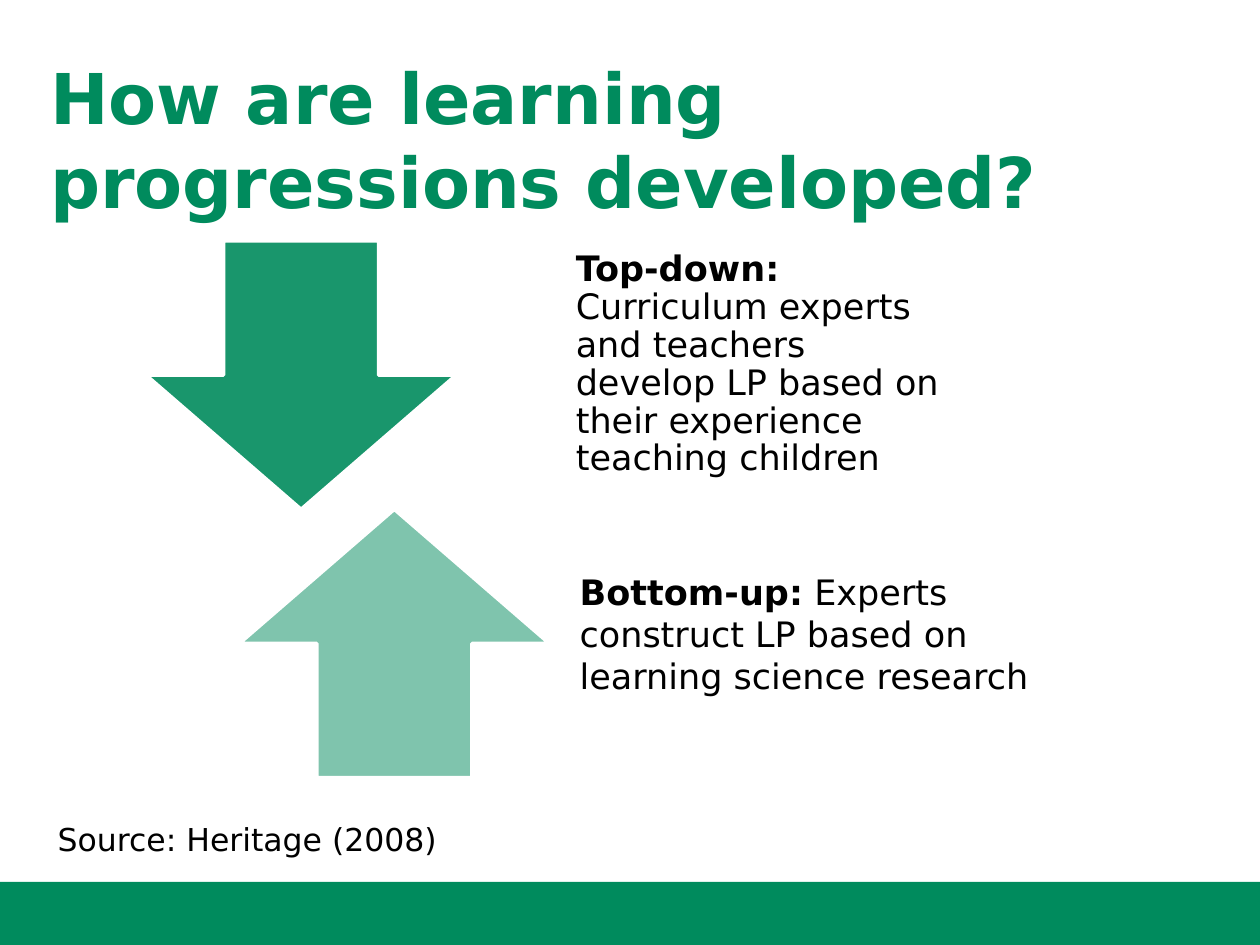
from lxml.etree import SubElement
from pptx import Presentation
from pptx.dml.color import RGBColor
from pptx.enum.shapes import MSO_SHAPE
from pptx.enum.text import MSO_ANCHOR
from pptx.oxml.ns import qn
from pptx.util import Inches, Pt

THEME = {
    "font": "DejaVu Sans",
    "green": RGBColor(0x00, 0x8B, 0x5D),
    "black": RGBColor(0, 0, 0),
    "white": RGBColor(0xFF, 0xFF, 0xFF),
    "title": Pt(40),
    "body": Pt(20),
    "source": Pt(18),
}

deck = Presentation()
deck.slide_width, deck.slide_height = Inches(10), Inches(7.5)
slide = deck.slides.add_slide(deck.slide_layouts[6])


def area(left, top, width, height):
    """Turn percentages of the slide's width and height into lengths."""
    across, down = deck.slide_width / 100, deck.slide_height / 100
    return [round(share) for share in
            (left * across, top * down, width * across, height * down)]


def add_text(place, runs, size, color, insets, anchor=MSO_ANCHOR.TOP):
    """Add one paragraph of (wording, bold) runs; insets are in inches."""
    frame = slide.shapes.add_textbox(*area(*place)).text_frame
    frame.word_wrap = True
    frame.vertical_anchor = anchor
    for side, inset in zip(("left", "top", "right", "bottom"), insets):
        setattr(frame, f"margin_{side}", Inches(inset))
    paragraph = frame.paragraphs[0]
    for wording, bold in runs:
        run = paragraph.add_run()
        run.text = wording
        look = {"name": THEME["font"], "size": THEME[size], "bold": bold}
        for attribute, value in look.items():
            setattr(run.font, attribute, value)
        run.font.color.rgb = THEME[color]
    return paragraph


footer = slide.shapes.add_shape(MSO_SHAPE.RECTANGLE, *area(0, 93.33, 100, 6.67))
footer.shadow.inherit = False
footer.fill.solid()
footer.fill.fore_color.rgb = THEME["green"]
footer.line.fill.background()

add_text((4, 5.73, 93, 13.07), [("How are learning progressions developed?", True)],
         "title", "green", (0, 0, 0.1, 0.05))
add_text((3.6, 86.13, 89.3, 5.33), [("Source: Heritage (2008)", False)],
         "source", "black", (0.1, 0.05, 0.1, 0.05))

# Each approach: arrow, opacity, arrow left, text left, text width, line spacing, wording
approaches = [
    (MSO_SHAPE.DOWN_ARROW, 90, 11.6, 44.1, 32.9, 0.9, "Top-down:",
     " Curriculum experts and teachers develop LP based on their experience teaching children"),
    (MSO_SHAPE.UP_ARROW, 50, 19, 44.4, 41.8, 1.0, "Bottom-up:",
     " Experts construct LP based on learning science research"),
]
first_top, row_height, arrow_width = 25.5, 28.4, 24.6

for row, (kind, opacity, arrow_left, text_left, text_width, spacing,
          heading, detail) in enumerate(approaches):
    top = first_top + row * row_height
    arrow = slide.shapes.add_shape(kind, *area(arrow_left, top, arrow_width, row_height))
    arrow.shadow.inherit = False
    arrow.fill.solid()
    arrow.fill.fore_color.rgb = THEME["green"]
    tint = arrow.fill._xPr.find(f"{qn('a:solidFill')}/{qn('a:srgbClr')}")
    SubElement(tint, qn("a:alpha"), val=str(opacity * 1000))
    arrow.line.color.rgb = THEME["white"]
    arrow.line.width = Pt(2)

    paragraph = add_text((text_left, top, text_width, row_height),
                         [(heading, True), (detail, False)], "body", "black",
                         (0.16, 0, 0.16, 0.16), MSO_ANCHOR.MIDDLE)
    paragraph.line_spacing = spacing

deck.save("out.pptx")
